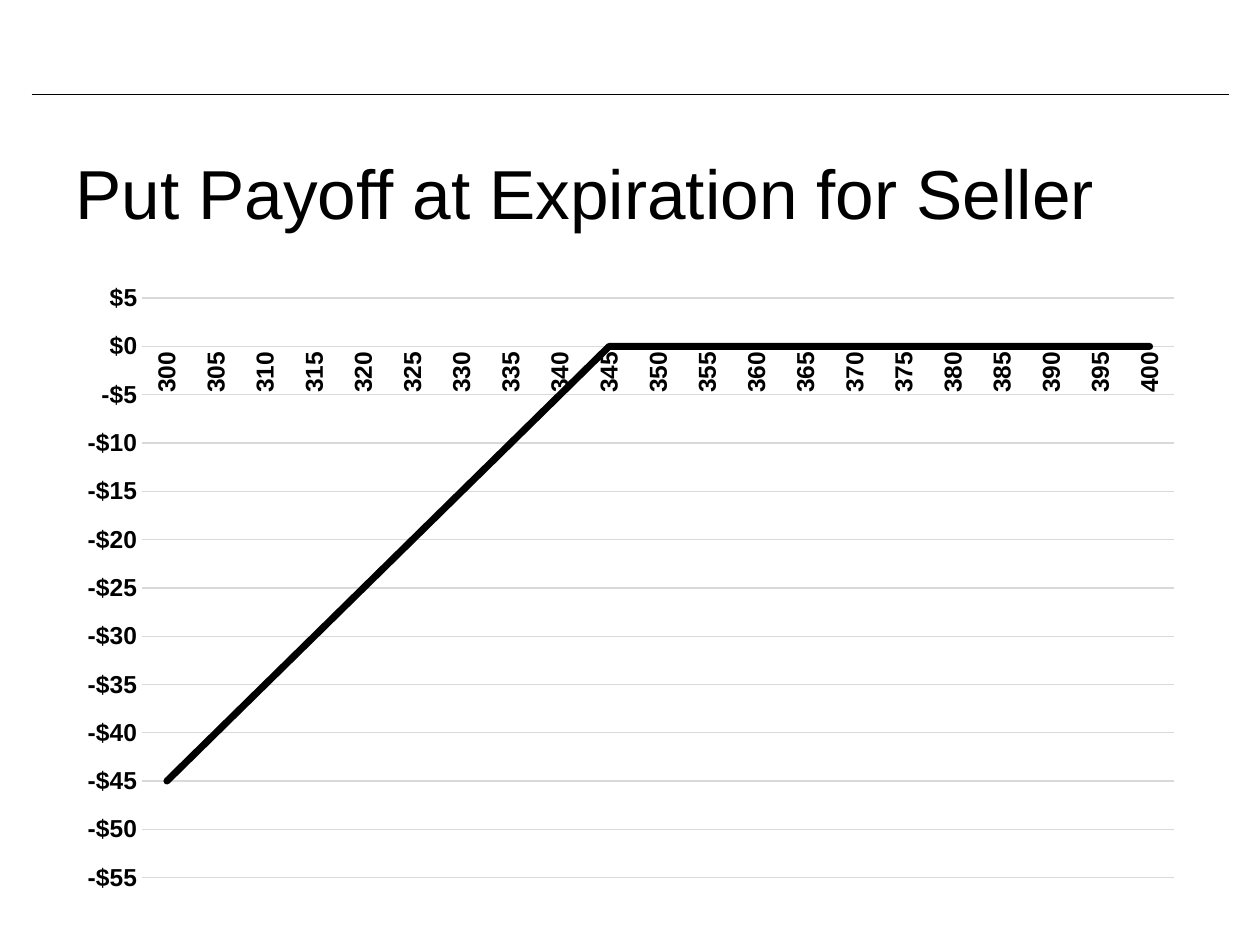
from lxml.etree import SubElement
from pptx import Presentation
from pptx.chart.data import CategoryChartData
from pptx.dml.color import RGBColor
from pptx.enum.chart import XL_CHART_TYPE, XL_MARKER_STYLE, XL_TICK_MARK
from pptx.enum.shapes import MSO_CONNECTOR
from pptx.enum.text import MSO_ANCHOR
from pptx.oxml import parse_xml
from pptx.oxml.ns import nsdecls, qn
from pptx.util import Pt

TITLE = "Put Payoff at Expiration for Seller"
STRIKE = 345
PRICES = range(300, 401, 5)
PAYOFFS = [min(price - STRIKE, 0) for price in PRICES]
DOLLARS = '"$"#,##0'
BLACK, GRAY = "000000", "D9D9D9"
PLOT_AREA = {"x": 0.07, "y": 0.04, "w": 0.91, "h": 0.92}  # shares of the chart


def color(value):
    return RGBColor.from_string(value)


def style_line(line, value, width):
    line.color.rgb = color(value)
    line.width = Pt(width)


def style_font(font, size, bold=False):
    font.name = "Arial"
    font.size = Pt(size)
    font.bold = bold
    font.color.rgb = color(BLACK)


def add_rule(slide):
    rule = slide.shapes.add_connector(
        MSO_CONNECTOR.STRAIGHT, Pt(18), Pt(54), Pt(702), Pt(54))
    style_line(rule.line, BLACK, 1)
    SubElement(rule._element.spPr, qn("a:effectLst"))


def add_title(slide):
    frame = slide.shapes.add_textbox(Pt(36), Pt(78), Pt(648), Pt(78)).text_frame
    frame.word_wrap = True
    frame.vertical_anchor = MSO_ANCHOR.TOP
    frame.margin_top = Pt(8)
    paragraph = frame.paragraphs[0]
    paragraph.text = TITLE
    style_font(paragraph.font, 39.6)


def set_plot_area(chart):
    """Fix the inner plot area, leaving room for the value labels."""
    sizes = "".join(f'<c:{key} val="{share}"/>' for key, share in PLOT_AREA.items())
    layout = parse_xml(
        f'<c:layout {nsdecls("c")}><c:manualLayout><c:layoutTarget val="inner"/>'
        f'<c:xMode val="edge"/><c:yMode val="edge"/>{sizes}'
        '</c:manualLayout></c:layout>')
    plot_area = chart._chartSpace.chart.plotArea
    for old_layout in plot_area.findall(qn("c:layout")):
        plot_area.remove(old_layout)
    plot_area.insert(0, layout)


def add_payoff_chart(slide):
    data = CategoryChartData()
    data.categories = [str(price) for price in PRICES]
    data.add_series("Series 1", PAYOFFS)
    chart = slide.shapes.add_chart(
        XL_CHART_TYPE.LINE, Pt(36), Pt(156), Pt(648), Pt(360), data).chart
    chart.has_legend = False
    chart.has_title = False
    style_font(chart.font, 14, bold=True)
    set_plot_area(chart)

    chart.plots[0].vary_by_categories = False
    series = chart.plots[0].series[0]
    series.smooth = False
    series.marker.style = XL_MARKER_STYLE.NONE
    style_line(series.format.line, BLACK, 4)
    series.format.line._get_or_add_ln().set("cap", "rnd")

    prices, payoffs = chart.category_axis, chart.value_axis
    for axis in (prices, payoffs):
        axis.major_tick_mark = axis.minor_tick_mark = XL_TICK_MARK.NONE
        axis.tick_labels.number_format = DOLLARS
        axis.tick_labels.number_format_is_linked = False
        style_font(axis.tick_labels.font, 14, bold=True)
    style_line(prices.format.line, GRAY, 0.75)
    text_body = prices._element.find(qn("c:txPr")).find(qn("a:bodyPr"))
    text_body.set("rot", "-5400000")
    text_body.set("vert", "horz")

    payoffs.minimum_scale, payoffs.maximum_scale = -55, 5
    payoffs.major_unit = 5
    payoffs.format.line.fill.background()
    style_line(payoffs.major_gridlines.format.line, GRAY, 0.75)


def main():
    presentation = Presentation()
    presentation.slide_width, presentation.slide_height = Pt(720), Pt(540)
    slide = presentation.slides.add_slide(presentation.slide_layouts[6])
    add_rule(slide)
    add_title(slide)
    add_payoff_chart(slide)
    presentation.save("out.pptx")


if __name__ == "__main__":
    main()
